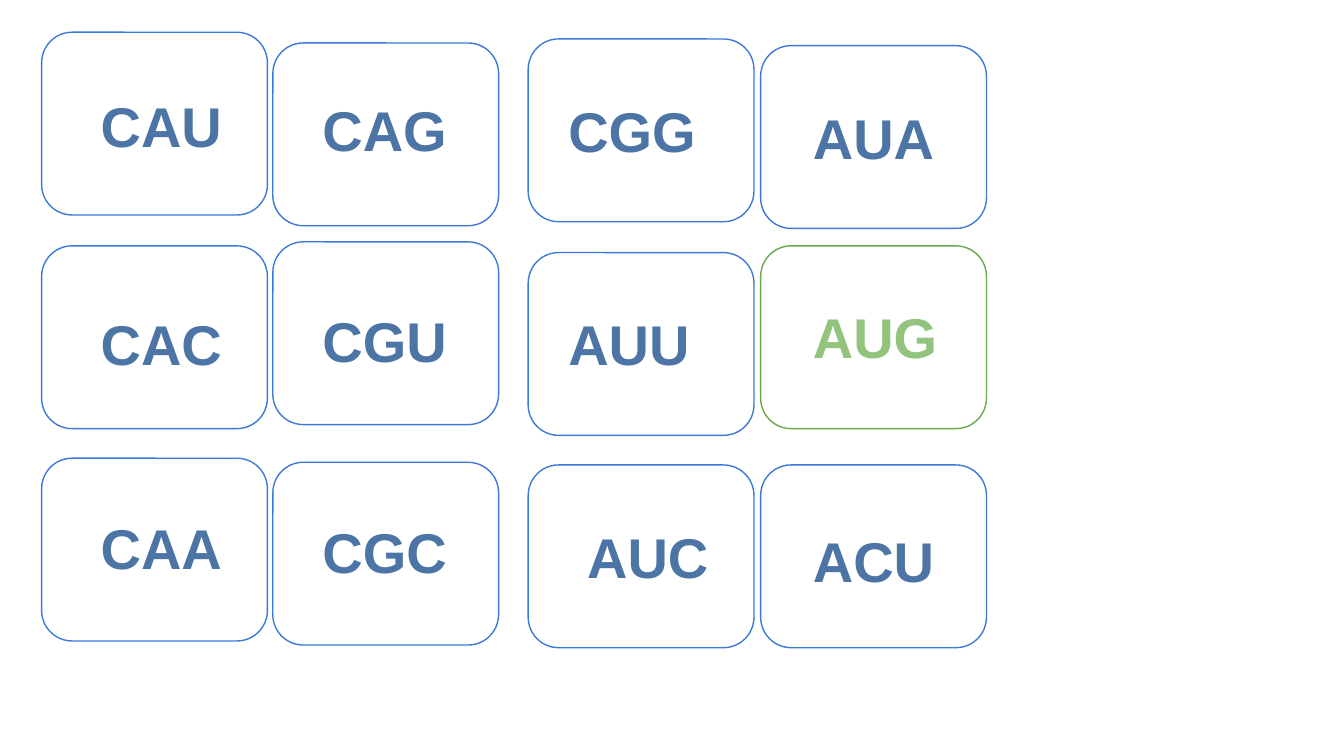
from pptx import Presentation
from pptx.dml.color import RGBColor
from pptx.enum.shapes import MSO_SHAPE
from pptx.enum.text import MSO_AUTO_SIZE
from pptx.util import Inches, Pt

WHITE = RGBColor(0xFF, 0xFF, 0xFF)
BLUE_LINE = RGBColor(0x3C, 0x78, 0xD8)
BLUE_TEXT = RGBColor(0x4C, 0x75, 0xA6)
GREEN_LINE = RGBColor(0x6A, 0xA8, 0x4F)
GREEN_TEXT = RGBColor(0x93, 0xC4, 0x7D)

CARD_W, CARD_H = 1.68, 1.36
LABEL_W, LABEL_H = 3.28, 0.71
START_CODON = "AUG"

# Each column: card left, then (codon, card top, label dx, label dy) per card
COLUMNS = [
    (0.31, [("CAU", 0.24, 0.34, 0.34), ("CAC", 1.83, 0.34, 0.37), ("CAA", 3.41, 0.34, 0.31)]),
    (2.03, [("CAG", 0.32, 0.27, 0.29), ("CGU", 1.80, 0.27, 0.38), ("CGC", 3.44, 0.27, 0.31)]),
    (3.93, [("CGG", 0.29, 0.20, 0.33), ("AUU", 1.88, 0.20, 0.32), ("AUC", 3.46, 0.34, 0.33)]),
    (5.66, [("AUA", 0.34, 0.29, 0.33), ("AUG", 1.83, 0.29, 0.32), ("ACU", 3.46, 0.29, 0.36)]),
]


def add_card(s, left, top, line_color):
    sp = s.shapes.add_shape(MSO_SHAPE.ROUNDED_RECTANGLE, Inches(left), Inches(top),
                            Inches(CARD_W), Inches(CARD_H))
    sp.shadow.inherit = False
    sp.fill.solid()
    sp.fill.fore_color.rgb = WHITE
    sp.line.color.rgb = line_color
    sp.line.width = Pt(0.75)


def add_label(s, left, top, codon, color):
    tb = s.shapes.add_textbox(Inches(left), Inches(top), Inches(LABEL_W), Inches(LABEL_H))
    tf = tb.text_frame
    tf.word_wrap = True
    tf.auto_size = MSO_AUTO_SIZE.SHAPE_TO_FIT_TEXT
    tf.margin_left = tf.margin_right = tf.margin_top = tf.margin_bottom = Inches(0.1)
    tf.text = codon
    font = tf.paragraphs[0].runs[0].font
    font.name = "Arial"
    font.size = Pt(30)
    font.bold = True
    font.color.rgb = color


def add_column(s, left, cards):
    """Place the cards of one column, with the start codon in green."""
    for codon, top, dx, dy in cards:
        is_start = codon == START_CODON
        add_card(s, left, top, GREEN_LINE if is_start else BLUE_LINE)
        add_label(s, left + dx, top + dy, codon, GREEN_TEXT if is_start else BLUE_TEXT)


def main():
    prs = Presentation()
    prs.slide_width = Inches(10)
    prs.slide_height = prs.slide_width * 9 // 16
    s = prs.slides.add_slide(prs.slide_layouts[6])
    for left, cards in COLUMNS:
        add_column(s, left, cards)
    prs.save("out.pptx")


if __name__ == "__main__":
    main()
